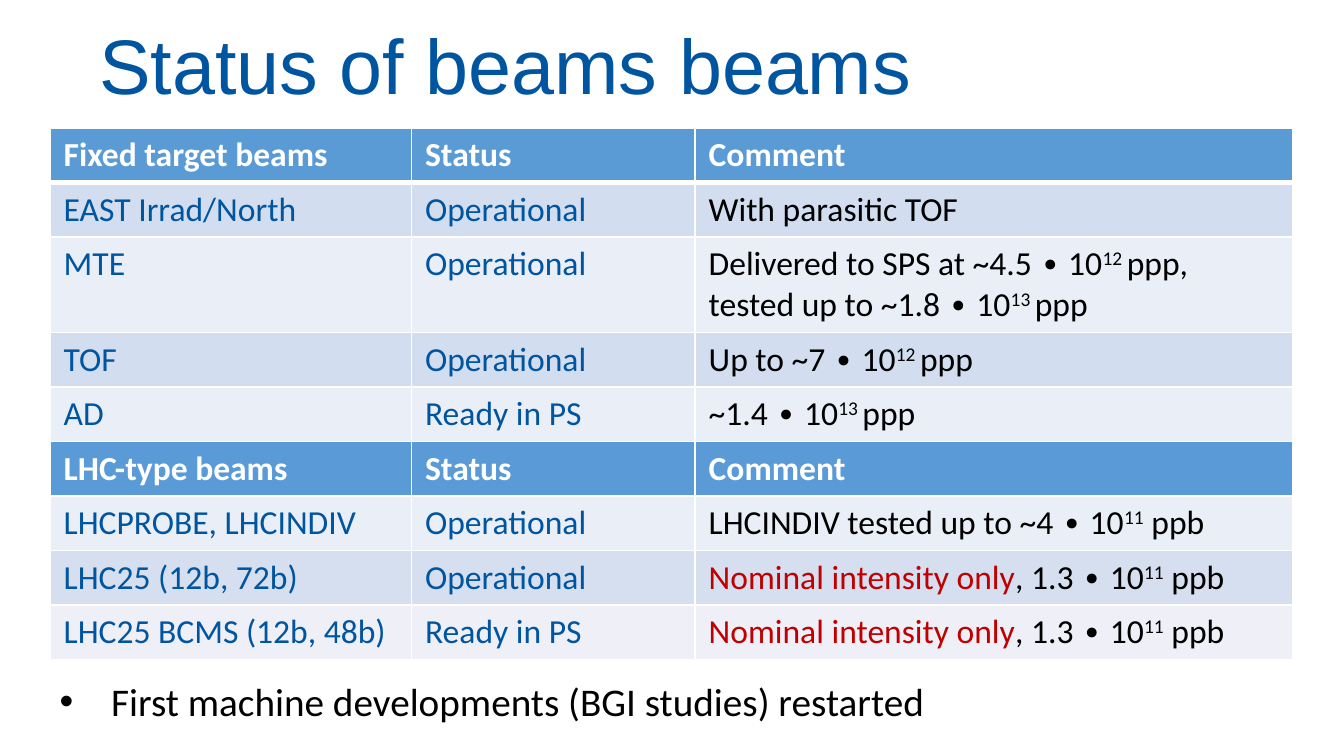
from lxml.etree import SubElement
from pptx import Presentation
from pptx.dml.color import RGBColor
from pptx.enum.text import MSO_ANCHOR, MSO_AUTO_SIZE, PP_ALIGN
from pptx.oxml.ns import qn
from pptx.util import Cm, Pt

BLUE, BLACK, WHITE, RED = "0055A0", "000000", "FFFFFF", "C00000"
COLUMN_WIDTHS = (6.83, 5.36, 11.3)
LINE_ROW, TWO_LINE_ROW = 1.03, 1.8

# Comments are split at "|"; "^" starts a superscript and "!" a warning.
BEAMS = [
    ("5B9BD5", "Fixed target beams", "Status", "Comment"),
    ("D2DEEF", "EAST Irrad/North", "Operational", "With parasitic TOF"),
    ("EAEFF7", "MTE", "Operational",
     "Delivered to SPS at ~4.5 ∙ 10|^12 |ppp, tested up to ~1.8 ∙ 10|^13 |ppp"),
    ("D2DEEF", "TOF", "Operational", "Up to ~7 ∙ 10|^12 |ppp"),
    ("EAEFF7", "AD", "Ready in PS", "~1.4 ∙ 10|^13 |ppp"),
    ("5A9AD6", "LHC-type beams", "Status", "Comment"),
    ("EAEFF7", "LHCPROBE, LHCINDIV", "Operational",
     "LHCINDIV tested up to ~4 ∙ 10|^11| ppb"),
    ("D6DFEF", "LHC25 (12b, 72b)", "Operational",
     "!Nominal intensity only|, 1.3 ∙ 10|^11| ppb"),
    ("EFEFF7", "LHC25 BCMS (12b, 48b)", "Ready in PS",
     "!Nominal intensity only|, 1.3 ∙ 10|^11| ppb"),
]
HEADER_ROWS = (0, 5)
TWO_LINE_ROWS = (2,)


def color(value):
    """Turn a hex string into a colour."""
    return RGBColor.from_string(value)


def set_font(paragraph, name, size, value, bold=False):
    """Set the font shared by all runs of a paragraph."""
    font = paragraph.font
    font.name, font.size, font.bold = name, Pt(size), bold
    font.color.rgb = color(value)


def set_insets(frame, side, top):
    """Set equal left and right, and equal top and bottom insets."""
    frame.margin_left = frame.margin_right = Cm(side)
    frame.margin_top = frame.margin_bottom = Cm(top)


def write_runs(paragraph, marked_text):
    """Write marked text as plain, superscript and warning runs."""
    for part in marked_text.split("|"):
        run = paragraph.add_run()
        run.text = part.lstrip("^!")
        if part.startswith("^"):
            run.font._element.set("baseline", "30000")
        elif part.startswith("!"):
            run.font.color.rgb = color(RED)


def set_borders(cell, top, bottom):
    """Draw white cell borders with the given top and bottom widths."""
    properties = cell._tc.get_or_add_tcPr()
    for side, width in (("L", 1), ("R", 1), ("T", top), ("B", bottom)):
        border = SubElement(properties, qn(f"a:ln{side}"), w=str(Pt(width)))
        fill = SubElement(border, qn("a:solidFill"))
        SubElement(fill, qn("a:srgbClr"), val=WHITE)


def add_title(slide, text):
    """Place and format the slide title."""
    title = slide.shapes.title
    title.left, title.top, title.width, title.height = (
        Cm(1.75), Cm(0.61), Cm(21.89), Cm(1.19))
    frame = title.text_frame
    frame.text = text
    frame.auto_size = MSO_AUTO_SIZE.NONE
    frame.vertical_anchor = MSO_ANCHOR.MIDDLE
    set_insets(frame, 0.13, 0.13)
    paragraph = frame.paragraphs[0]
    paragraph.alignment = PP_ALIGN.LEFT
    set_font(paragraph, "Arial", 41.4, BLUE)


def add_beam_table(slide):
    """Add the table of beams with their status and comments."""
    heights = [TWO_LINE_ROW if row in TWO_LINE_ROWS else LINE_ROW
               for row in range(len(BEAMS))]
    table = slide.shapes.add_table(
        len(BEAMS), len(COLUMN_WIDTHS), Cm(0.95), Cm(2.42),
        Cm(sum(COLUMN_WIDTHS)), Cm(sum(heights))).table
    table.horz_banding = False
    for column, width in zip(table.columns, COLUMN_WIDTHS):
        column.width = Cm(width)
    for row, (band, *texts) in enumerate(BEAMS):
        table.rows[row].height = Cm(heights[row])
        header = row in HEADER_ROWS
        for column, text in enumerate(texts):
            cell = table.cell(row, column)
            set_borders(cell, 3 if row == 1 else 1, 3 if row == 0 else 1)
            cell.fill.solid()
            cell.fill.fore_color.rgb = color(band)
            paragraph = cell.text_frame.paragraphs[0]
            write_runs(paragraph, text)
            text_color = WHITE if header else BLACK if column == 2 else BLUE
            set_font(paragraph, "Calibri", 18, text_color, header)


def add_bullet(slide, text):
    """Add the bulleted remark below the table."""
    frame = slide.shapes.add_textbox(
        Cm(0.95), Cm(12.7), Cm(23.04), Cm(1.09)).text_frame
    frame.word_wrap = True
    set_insets(frame, 0.18, 0.1)
    paragraph = frame.paragraphs[0]
    paragraph.text = text
    properties = paragraph._p.get_or_add_pPr()
    properties.set("marL", str(Cm(0.97)))
    properties.set("indent", str(-Cm(0.97)))
    SubElement(properties, qn("a:buFont"), typeface="Arial")
    SubElement(properties, qn("a:buChar"), char="•")
    set_font(paragraph, "Calibri", 21, BLACK)


def main():
    """Build and save the slide."""
    presentation = Presentation()
    presentation.slide_width, presentation.slide_height = Cm(25.4), Cm(14.29)
    slide = presentation.slides.add_slide(presentation.slide_layouts[5])
    add_title(slide, "Status of beams beams")
    add_beam_table(slide)
    add_bullet(slide, "First machine developments (BGI studies) restarted")
    presentation.save("out.pptx")


if __name__ == "__main__":
    main()
